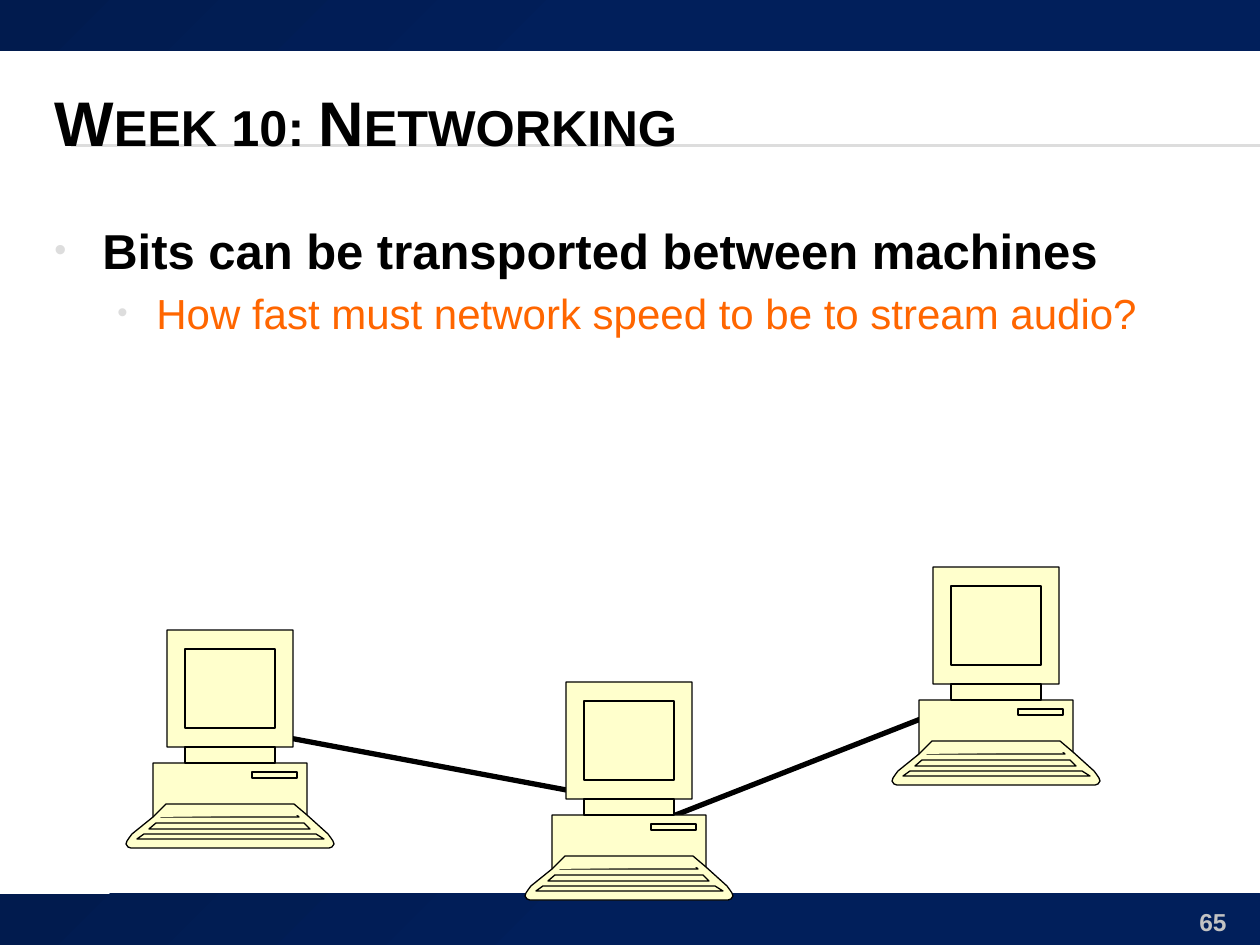
from copy import deepcopy

from lxml import etree
from pptx import Presentation, util as u
from pptx.dml.color import RGBColor
from pptx.enum import shapes, text
from pptx.oxml import ns

PX = 914400 / 126
COLORS = {
    "black": "000000", "orange": "FF6600", "gray": "DDDDDD", "number": "C3C3C3",
    "navy": "011F5B", "dark navy": "011B4E", "cream": "FFFFCC",
}
HEX = {name: RGBColor.from_string(value) for name, value in COLORS.items()}


def px(*lengths):
    return [u.Emu(round(length * PX)) for length in lengths]


def write(paragraph, words, size, color="black", bold=True, small_caps=False,
          align=text.PP_ALIGN.LEFT, bullet_indent=None):
    """Add one run; bullet_indent is (left margin, hanging indent) in px."""
    run = paragraph.add_run()
    run.text = words
    run.font.name, run.font.size, run.font.bold = "Arial", u.Pt(size), bold
    run.font.color.rgb = HEX[color]
    if small_caps:
        run.font._element.set("cap", "small")
    paragraph.alignment = align
    if bullet_indent:
        margin, hanging = px(*bullet_indent)
        properties = paragraph._p.get_or_add_pPr()
        properties.set("marL", str(margin))
        properties.set("indent", str(-hanging))
        spacing = etree.SubElement(properties, ns.qn("a:spcBef"))
        etree.SubElement(spacing, ns.qn("a:spcPct"), val="20000")
        bullet_color = etree.SubElement(properties, ns.qn("a:buClr"))
        etree.SubElement(bullet_color, ns.qn("a:srgbClr"), val=COLORS["gray"])
        etree.SubElement(properties, ns.qn("a:buSzPct"), val="70000")
        etree.SubElement(properties, ns.qn("a:buFont"), typeface="Arial")
        etree.SubElement(properties, ns.qn("a:buChar"), char="•")


presentation = Presentation()
presentation.slide_width, presentation.slide_height = px(1260, 945)
slide = presentation.slides.add_slide(presentation.slide_layouts[6])

# Lines: the title rule first, then the bands, then the network cables
rules = [(71, y, 1260, y, "gray", 0.75) for y in (145, 146)]
cables = [(640, 829, 987, 693, "black", 3), (609, 798, 220, 725, "black", 3)]
connectors = []
for *ends, color, width in rules + cables:
    connector = slide.shapes.add_connector(shapes.MSO_CONNECTOR.STRAIGHT, *px(*ends))
    connector.line.color.rgb = HEX[color]
    connector.line.width = u.Pt(width)
    etree.SubElement(connector._element.spPr, ns.qn("a:effectLst"))
    connectors.append(connector)

for top, height in ((0, 51), (894, 51)):
    band = slide.shapes.add_shape(shapes.MSO_SHAPE.RECTANGLE, *px(0, top, 1260, height))
    band.shadow.inherit = False
    band.line.fill.background()
    band.fill.gradient()
    band.fill.gradient_angle = 315
    for stop, color, position in zip(band.fill.gradient_stops, ("dark navy", "navy"), (0, 0.5)):
        stop.color.rgb = HEX[color]
        stop.position = position

# Text
frames = []
for box in ((42, 63, 1197, 116), (42, 214, 1197, 668), (1134, 901, 105, 34)):
    frame = slide.shapes.add_textbox(*px(*box)).text_frame
    frame.word_wrap = True
    frames.append(frame)
title, body, number = frames
title.vertical_anchor = text.MSO_ANCHOR.MIDDLE
write(title.paragraphs[0], "Week 10: Networking", 36, small_caps=True)
write(body.paragraphs[0], "Bits can be transported between machines", 28, bullet_indent=(48, 48))
question = body.add_paragraph()
question.level = 1
write(question, "How fast must network speed to be to stream audio?", 24,
      color="orange", bold=False, bullet_indent=(102, 39))
write(number.paragraphs[0], "65", 14, color="number", align=text.PP_ALIGN.RIGHT)

# Cables lie above the text and below the computers
for cable in connectors[len(rules):]:
    slide.shapes._spTree.append(cable._element)

# Computer parts, in px from the computer's top left corner
outline = [
    (202, 204), (181, 185), (181, 133), (149, 133), (149, 117), (167, 117), (167, 0),
    (41, 0), (41, 117), (59, 117), (59, 133), (27, 133), (27, 187), (6, 204), (3, 208),
    (1, 211), (0, 214), (2, 217), (5, 218), (203, 218), (206, 217), (208, 214),
    (207, 211), (205, 208),
]
key_rows = [
    [(173, 187), (166, 180), (42, 180), (35, 187)],
    [(184, 199), (178, 193), (30, 193), (23, 199)],
    [(198, 209), (190, 204), (18, 204), (11, 209)],
]
keyboard_back = [(181, 185), (168, 174), (40, 174), (27, 187)]
rectangles = [
    [(left, top), (left, bottom), (right, bottom), (right, top)]
    for left, top, right, bottom in (
        (126, 142, 171, 148),   # drive slot
        (59, 19, 149, 98),      # screen
        (59, 117, 149, 133),    # neck
    )
]
parts = [outline, *key_rows, keyboard_back, *rectangles]

for left, top in ((525, 682), (126, 630), (892, 567)):
    builder = slide.shapes.build_freeform(*outline[0], scale=PX)
    for part in parts:
        if part is not outline:
            builder.move_to(*part[0])
        builder.add_line_segments(part[1:], close=part is not keyboard_back)
    computer = builder.convert_to_shape(*px(left, top))
    computer.shadow.inherit = False
    computer.fill.solid()
    computer.fill.fore_color.rgb = HEX["cream"]
    computer.line.color.rgb = HEX["black"]
    computer.line.width = u.Pt(0.75)

    # Give every part its own path, so that overlaps stay filled
    path_list = computer._element.find(".//" + ns.qn("a:pathLst"))
    combined = path_list[0]
    empty = deepcopy(combined)
    for step in list(empty):
        empty.remove(step)
    for step in list(combined):
        if step.tag == ns.qn("a:moveTo"):
            path_list.append(deepcopy(empty))
        path_list[-1].append(step)
    path_list.remove(combined)

presentation.save("out.pptx")
